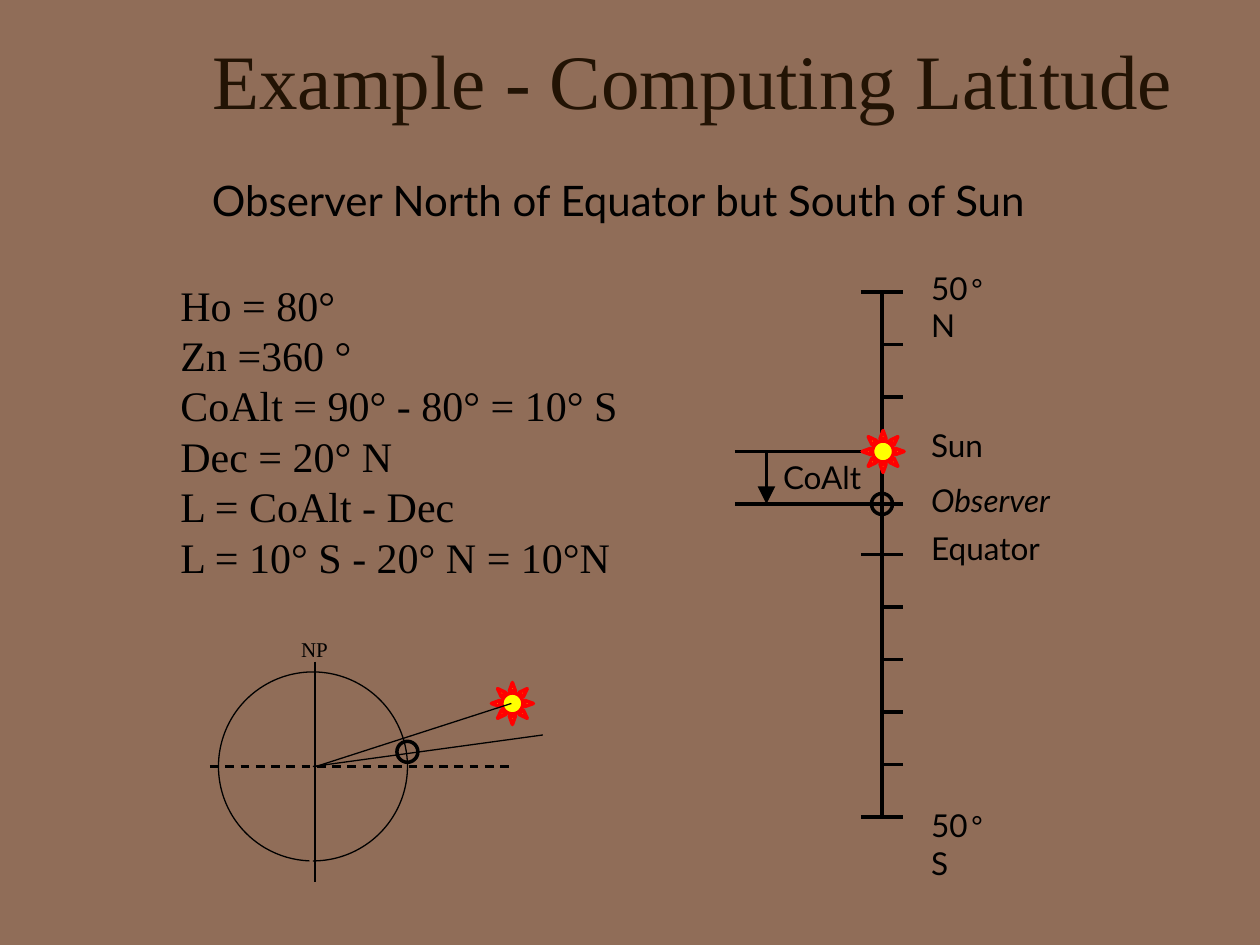
from dataclasses import dataclass

from lxml.etree import SubElement
from pptx import Presentation
from pptx.dml.color import RGBColor
from pptx.enum.dml import MSO_LINE
from pptx.enum.shapes import MSO_CONNECTOR, MSO_SHAPE
from pptx.enum.text import MSO_ANCHOR, PP_ALIGN
from pptx.oxml.ns import qn
from pptx.shapes.autoshape import Shape
from pptx.shapes.connector import Connector
from pptx.util import Emu, Pt

PX = 914400 // 120
COLORS = {
    "background": "906D58",
    "title": "221304",
    "ink": "000000",
    "sun": "FFFF00",
    "rays": "FF0000",
}
SERIF, SANS, DEGREE = "Times New Roman", "Lato", "Courier New"
AXIS, TICK_LEFT, TICK_RIGHT = 840, 820, 860
SUN_Y, OBSERVER_Y, EQUATOR_Y = 430, 480, 528
TICKS = [278, 328, 378, SUN_Y, OBSERVER_Y, EQUATOR_Y, 578, 628, 678, 728, 778]
LONG_TICKS = (TICKS[0], EQUATOR_Y, TICKS[-1])


@dataclass
class Label:
    text: str
    left: int
    top: int
    width: int
    height: int
    size: int = 18
    font: str = SANS
    color: str = "ink"
    align: PP_ALIGN = PP_ALIGN.LEFT
    anchor: MSO_ANCHOR = MSO_ANCHOR.TOP
    wrap: bool = False
    italic: bool = False


@dataclass
class Line:
    x1: int
    y1: int
    x2: int
    y2: int
    weight: float = 2
    dashed: bool = False
    arrow: bool = False


TEXTS = [
    Label("Example - Computing Latitude", 120, 30, 1080, 90, 44, SERIF, "title",
          PP_ALIGN.CENTER, MSO_ANCHOR.MIDDLE, True),
    Label("Observer North of Equator but South of Sun", 190, 160, 802, 60, 24),
    Label("Ho = 80°\nZn =360 °\nCoAlt = 90° - 80° = 10° S\nDec = 20° N\n"
          "L = CoAlt - Dec\nL = 10° S - 20° N = 10°N", 160, 260, 451, 302, 24, SERIF),
    Label("CoAlt", 728, 430, 110, 48, align=PP_ALIGN.CENTER, wrap=True),
    Label("50°N", 875, 250, 86, 48, wrap=True),
    Label("Sun", 875, 400, 80, 48),
    Label("Observer", 875, 452, 150, 48, italic=True),
    Label("Equator", 875, 498, 140, 48),
    Label("50°S", 875, 762, 86, 48, wrap=True),
    Label("NP", 275, 600, 50, 36, 12, SERIF),
]
SCALE_LINES = [
    *(Line(TICK_LEFT if y in LONG_TICKS else AXIS, y, TICK_RIGHT, y) for y in TICKS),
    Line(AXIS, TICKS[0], AXIS, TICKS[-1]),
    Line(700, OBSERVER_Y, AXIS, OBSERVER_Y),
    Line(700, SUN_Y, AXIS, SUN_Y),
    Line(730, SUN_Y, 730, OBSERVER_Y, arrow=True),
]


def color(name: str) -> RGBColor:
    return RGBColor.from_string(COLORS[name])


def add_label(shapes, label: Label) -> None:
    box = shapes.add_textbox(*(Emu(n * PX) for n in
                               (label.left, label.top, label.width, label.height)))
    frame = box.text_frame
    frame.word_wrap = label.wrap
    frame.vertical_anchor = label.anchor
    frame.text = label.text
    for para in frame.paragraphs:
        para.alignment = label.align
        if label.font == SANS and "°" in label.text:
            number, unit = para.text.split("°")
            para.text = number
            for part in ("°", unit):
                para.add_run().text = part
        for span in para.runs:
            span.font.name = DEGREE if span.text == "°" else label.font
            span.font.size = Pt(label.size)
            span.font.italic = label.italic
            span.font.color.rgb = color(label.color)


def add_line(shapes, line: Line) -> Connector:
    connector = shapes.add_connector(
        MSO_CONNECTOR.STRAIGHT,
        *(Emu(n * PX) for n in (line.x1, line.y1, line.x2, line.y2)))
    connector.line.color.rgb = color("ink")
    connector.line.width = Pt(line.weight)
    if line.dashed:
        connector.line.dash_style = MSO_LINE.DASH
    if line.arrow:
        SubElement(connector.line._get_or_add_ln(), qn("a:tailEnd"),
                   type="triangle", w="lg", len="lg")
    SubElement(connector._element.spPr, qn("a:effectLst"))
    return connector


def add_outline(shapes, kind: MSO_SHAPE, left: int, top: int, size: int,
                weight: float = 2, stroke: str = "ink") -> Shape:
    shape = shapes.add_shape(kind, *(Emu(n * PX) for n in (left, top, size, size)))
    shape.shadow.inherit = False
    shape.fill.background()
    shape.line.color.rgb = color(stroke)
    shape.line.width = Pt(weight)
    return shape


def add_sun(shapes, left: int, top: int) -> None:
    sun = add_outline(shapes, MSO_SHAPE.SUN, left, top, 40, stroke="rays")
    sun.fill.solid()
    sun.fill.fore_color.rgb = color("sun")


def add_observer(shapes, left: int, top: int) -> None:
    add_outline(shapes, MSO_SHAPE.OVAL, left, top, 20)


def add_globe(shapes) -> None:
    globe = shapes.add_group_shape().shapes
    earth = add_outline(globe, MSO_SHAPE.ARC, 208, 640, 180, 0.75)
    earth.rotation = 90
    earth.adjustments[0] = 1.33
    earth.adjustments[1] = 0
    add_line(globe, Line(200, 730, 490, 730, 1.25, dashed=True))
    add_sun(globe, 468, 650)
    add_line(globe, Line(298, 730, 517, 700, 0.75))
    add_line(globe, Line(301, 730, 487, 670, 0.75))
    add_observer(globe, 378, 706)
    add_line(shapes, Line(300, 630, 300, 840, 0.75))


def main() -> None:
    deck = Presentation()
    deck.slide_width, deck.slide_height = Emu(1200 * PX), Emu(900 * PX)
    page = deck.slides.add_slide(deck.slide_layouts[6])
    page.background.fill.solid()
    page.background.fill.fore_color.rgb = color("background")
    for line in SCALE_LINES:
        add_line(page.shapes, line)
    add_observer(page.shapes, AXIS - 10, OBSERVER_Y - 10)
    for label in TEXTS:
        add_label(page.shapes, label)
    add_sun(page.shapes, AXIS - 19, SUN_Y - 20)
    add_globe(page.shapes)
    deck.save("out.pptx")


if __name__ == "__main__":
    main()
